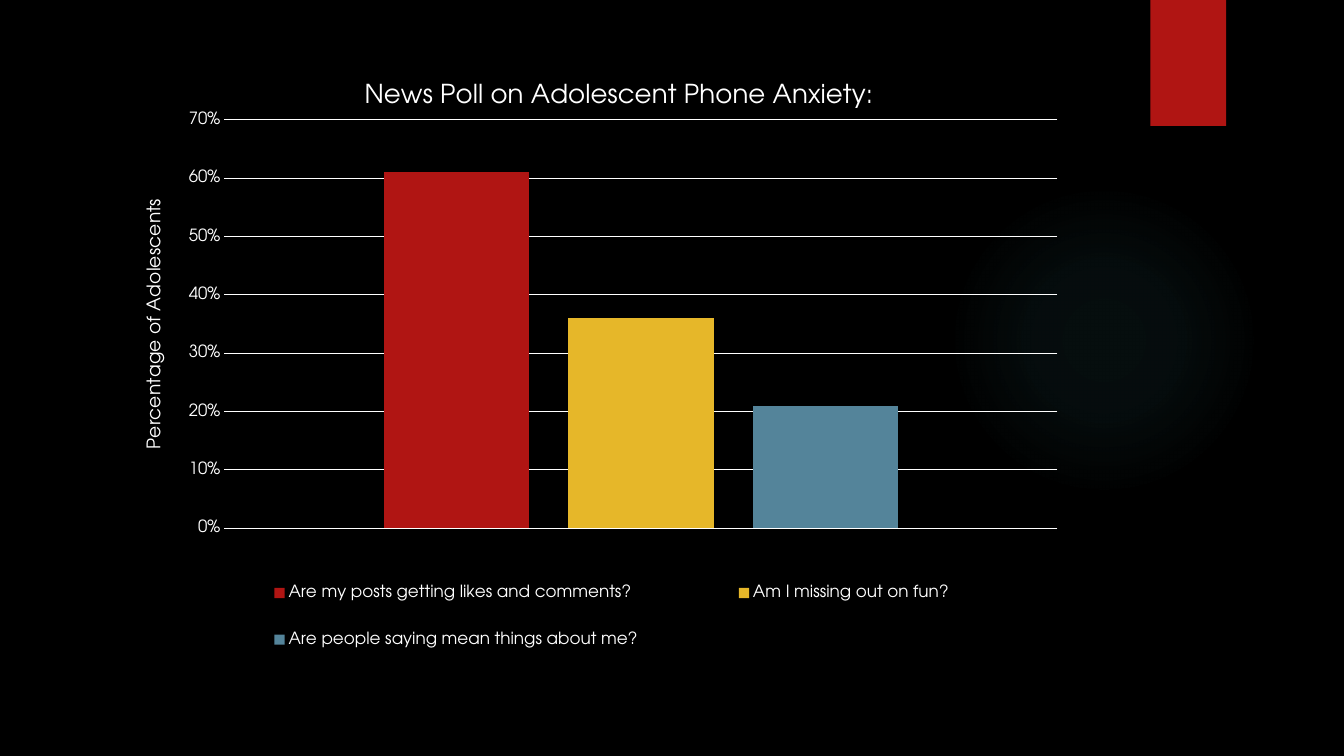
import pptx
import pptx.chart.data
import pptx.dml.color
import pptx.enum.chart
import pptx.enum.shapes
import pptx.oxml
import pptx.oxml.ns
import pptx.util

Pt = pptx.util.Pt
qn = pptx.oxml.ns.qn


class Theme:
    font = "TeX Gyre Adventor"
    black = pptx.dml.color.RGBColor.from_string("000000")
    white = pptx.dml.color.RGBColor.from_string("FFFFFF")
    red = pptx.dml.color.RGBColor.from_string("B01513")
    yellow = pptx.dml.color.RGBColor.from_string("E6B729")
    blue = pptx.dml.color.RGBColor.from_string("54849A")
    glow = pptx.dml.color.RGBColor.from_string("50B9C1")
    title_size = Pt(18.6)
    axis_title_size = Pt(13.3)
    label_size = Pt(12)


chart_left, chart_top, chart_width, chart_height = 87.12, 42.48, 704.16, 450


def place(element, index, inner, **points):
    for old in element.findall(qn("c:layout")):
        element.remove(old)
    modes = '<c:layoutTarget val="inner"/>' if inner else ""
    modes += '<c:xMode val="edge"/><c:yMode val="edge"/>'
    spans = {"x": chart_width, "y": chart_height, "w": chart_width, "h": chart_height}
    values = "".join(f'<c:{key} val="{value / spans[key]:.4f}"/>' for key, value in points.items())
    element.insert(index, pptx.oxml.parse_xml(
        f'<c:layout {pptx.oxml.ns.nsdecls("c")}><c:manualLayout>{modes}{values}'
        "</c:manualLayout></c:layout>"))


def write_title(title, text, size):
    para = title.text_frame.paragraphs[0]
    span = para.add_run()
    span.text = text
    span.font.size = size
    span.font.bold = False
    span.font.name = Theme.font
    span.font.color.rgb = Theme.white


deck = pptx.Presentation()
deck.slide_width, deck.slide_height = Pt(960), Pt(540)
page = deck.slides.add_slide(deck.slide_layouts[6])
page.background.fill.solid()
page.background.fill.fore_color.rgb = Theme.black

glow = page.shapes.add_shape(
    pptx.enum.shapes.MSO_SHAPE.OVAL, Pt(677.5), Pt(131.8), Pt(221.8), Pt(221.8))
glow.shadow.inherit = False
glow.line.fill.background()
stops = "".join(
    f'<a:gs pos="{position}000"><a:srgbClr val="{Theme.glow}"><a:alpha val="{alpha}000"/></a:srgbClr></a:gs>'
    for position, alpha in ((0, 7), (36, 6), (69, 0)))
glow.element.spPr.find(qn("a:prstGeom")).addnext(pptx.oxml.parse_xml(
    f'<a:gradFill {pptx.oxml.ns.nsdecls("a")}><a:gsLst>{stops}</a:gsLst>'
    '<a:path path="circle"><a:fillToRect l="50000" t="50000" r="50000" b="50000"/></a:path></a:gradFill>'))

tab = page.shapes.add_shape(
    pptx.enum.shapes.MSO_SHAPE.RECTANGLE, Pt(821.75), Pt(0), Pt(54), Pt(90))
tab.shadow.inherit = False
tab.fill.solid()
tab.fill.fore_color.rgb = Theme.red
tab.line.fill.background()
tab.element.spPr.find(qn("a:effectLst")).append(pptx.oxml.parse_xml(
    f'<a:outerShdw {pptx.oxml.ns.nsdecls("a")} blurRad="{Pt(3)}" dist="{Pt(2)}" dir="5400000">'
    f'<a:srgbClr val="{Theme.black}"><a:alpha val="45000"/></a:srgbClr></a:outerShdw>'))

worries = (
    ("Are my posts getting likes and comments?", 0.61, Theme.red),
    ("Am I missing out on fun?", 0.36, Theme.yellow),
    ("Are people saying mean things about me?", 0.21, Theme.blue),
)
poll = pptx.chart.data.CategoryChartData(number_format="0%")
poll.categories = ["1"]
for question, share, color in worries:
    poll.add_series(question, [share])
chart = page.shapes.add_chart(
    pptx.enum.chart.XL_CHART_TYPE.COLUMN_CLUSTERED, Pt(chart_left), Pt(chart_top),
    Pt(chart_width), Pt(chart_height), poll).chart
chart.font.name = Theme.font
chart.font.size = Theme.label_size
chart.font.color.rgb = Theme.white

plot = chart.plots[0]
plot.gap_width = 219
plot.overlap = -27
plot.vary_by_categories = False
for series, (question, share, color) in zip(plot.series, worries):
    series.format.fill.solid()
    series.format.fill.fore_color.rgb = color
place(chart.element.find(".//" + qn("c:plotArea")), 0, True, x=73.2, y=43.2, w=595, h=291.6)

chart.has_title = True
write_title(chart.chart_title, "News Poll on Adolescent Phone Anxiety:", Theme.title_size)
place(chart.chart_title.element, 1, False, x=170, y=12.6)

chart.category_axis.visible = False
share_axis = chart.value_axis
share_axis.minimum_scale, share_axis.maximum_scale, share_axis.major_unit = 0, 0.7, 0.1
share_axis.major_tick_mark = pptx.enum.chart.XL_TICK_MARK.NONE
share_axis.minor_tick_mark = pptx.enum.chart.XL_TICK_MARK.NONE
share_axis.format.line.fill.background()
share_axis.major_gridlines.format.line.color.rgb = Theme.white
share_axis.major_gridlines.format.line.width = Pt(0.75)
share_axis.tick_labels.number_format = "0%"
share_axis.tick_labels.number_format_is_linked = False
share_axis.tick_labels.font.size = Theme.label_size
share_axis.tick_labels.font.name = Theme.font
share_axis.tick_labels.font.color.rgb = Theme.white
write_title(share_axis.axis_title, "Percentage of Adolescents", Theme.axis_title_size)
turned = share_axis.axis_title.element.find(".//" + qn("a:bodyPr"))
turned.set("rot", "-5400000")
turned.set("vert", "horz")

chart.has_legend = True
legend = chart.legend
legend.position = pptx.enum.chart.XL_LEGEND_POSITION.BOTTOM
legend.include_in_layout = False
legend.font.size = Theme.label_size
legend.font.name = Theme.font
legend.font.color.rgb = Theme.white
place(chart.element.find(".//" + qn("c:legend")), 1, False, x=41, y=353.5, w=618, h=88.5)

deck.save("out.pptx")
